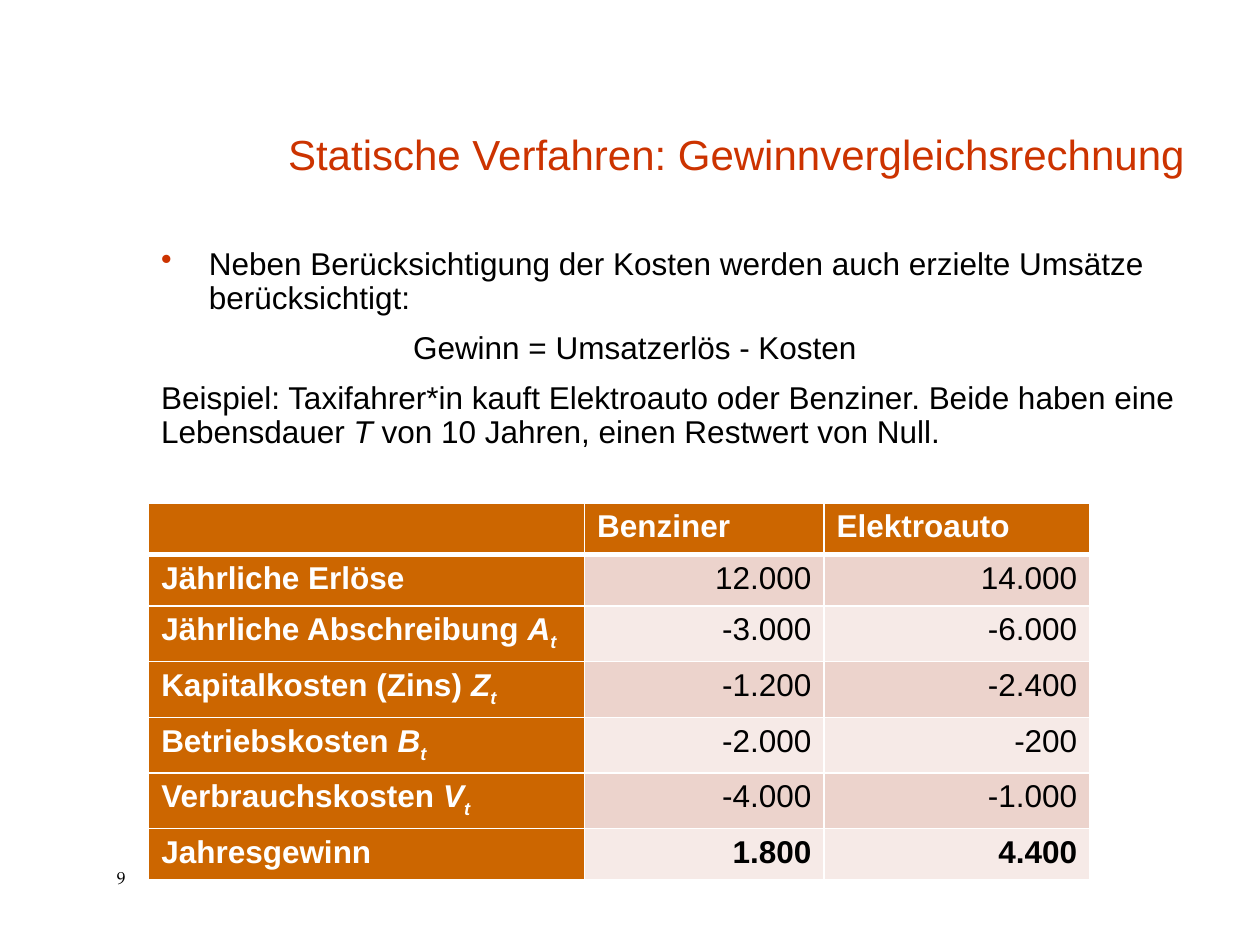
from dataclasses import dataclass

from lxml import etree
from pptx import Presentation
from pptx.dml.color import RGBColor
from pptx.enum.text import MSO_ANCHOR, PP_ALIGN
from pptx.oxml.ns import qn
from pptx.util import Inches, Pt

LEFT, RIGHT = PP_ALIGN.LEFT, PP_ALIGN.RIGHT
TOP, BOTTOM = MSO_ANCHOR.TOP, MSO_ANCHOR.BOTTOM
BLANK_LAYOUT = 6
COLORS = {
    "accent": "CC3300",
    "header": "CC6600",
    "band_dark": "ECD3CC",
    "band_light": "F6EAE7",
    "white": "FFFFFF",
    "black": "000000",
}
COLUMN_WIDTHS = (3.46, 1.9, 2.11)
ROW_HEIGHT = 0.41
THIN, THICK = 0.96, 3


@dataclass
class Style:
    size: float = 18
    color: str = "black"
    font: str = "Arial"
    bold: bool = False


@dataclass
class TableRow:
    label: str
    values: tuple[str, str]
    symbol: str = ""
    bold: bool = False


ROWS = (
    TableRow("Jährliche Erlöse", ("12.000", "14.000")),
    TableRow("Jährliche Abschreibung ", ("-3.000", "-6.000"), "A"),
    TableRow("Kapitalkosten (Zins) ", ("-1.200", "-2.400"), "Z"),
    TableRow("Betriebskosten ", ("-2.000", "-200"), "B"),
    TableRow("Verbrauchskosten ", ("-4.000", "-1.000"), "V"),
    TableRow("Jahresgewinn", ("1.800", "4.400"), bold=True),
)
BODY = Style()
LABEL = Style(color="white", bold=True)


def add_run(paragraph, text: str, style: Style, italic: bool = False, baseline: int = 0) -> None:
    """Append a run; baseline is a percentage, negative for subscript."""
    run = paragraph.add_run()
    run.text = text
    run.font.name = style.font
    run.font.size = Pt(style.size)
    run.font.bold = style.bold
    run.font.italic = italic
    run.font.color.rgb = RGBColor.from_string(COLORS[style.color])
    if baseline:
        run.font._element.set("baseline", str(baseline * 1000))


def add_text_frame(slide, left: float, top: float, width: float, height: float, anchor=TOP):
    box = slide.shapes.add_textbox(Inches(left), Inches(top), Inches(width), Inches(height))
    box.text_frame.word_wrap = True
    box.text_frame.vertical_anchor = anchor
    return box.text_frame


def set_indent(paragraph, left: float, first_line: float = 0) -> None:
    properties = paragraph._p.get_or_add_pPr()
    properties.set("marL", str(Inches(left)))
    properties.set("indent", str(Inches(first_line)))


def add_bullet(paragraph, character: str, color: str) -> None:
    properties = paragraph._p.get_or_add_pPr()
    bullet_color = etree.SubElement(properties, qn("a:buClr"))
    etree.SubElement(bullet_color, qn("a:srgbClr"), val=COLORS[color])
    etree.SubElement(properties, qn("a:buChar"), char=character)


def format_cell(cell, fill: str, top: float = THIN, bottom: float = THIN) -> None:
    """Fill the cell and give it white borders with widths in points."""
    cell.fill.solid()
    cell.fill.fore_color.rgb = RGBColor.from_string(COLORS[fill])
    properties = cell._tc.get_or_add_tcPr()
    borders = (("a:lnL", THIN), ("a:lnR", THIN), ("a:lnT", top), ("a:lnB", bottom))
    for position, (tag, width) in enumerate(borders):
        line = etree.Element(qn(tag), w=str(Pt(width)))
        line_fill = etree.SubElement(line, qn("a:solidFill"))
        etree.SubElement(line_fill, qn("a:srgbClr"), val=COLORS["white"])
        properties.insert(position, line)


def add_title(slide) -> None:
    paragraph = add_text_frame(slide, 2.09, 0.42, 7.41, 1.05, BOTTOM).paragraphs[0]
    paragraph.alignment = RIGHT
    paragraph.line_spacing = 0.9
    add_run(paragraph, "Statische Verfahren: Gewinnvergleichsrechnung", Style(24, "accent"))


def add_body(slide) -> None:
    frame = add_text_frame(slide, 1.18, 1.92, 8.29, 2.28)
    statement, formula, example = frame.paragraphs[0], frame.add_paragraph(), frame.add_paragraph()
    set_indent(statement, 0.38, -0.38)
    add_bullet(statement, "•", "accent")
    set_indent(formula, 2)
    for paragraph in (statement, formula, example):
        paragraph.alignment = LEFT
        paragraph.line_spacing = 0.9
    for paragraph in (formula, example):
        paragraph.space_before = Pt(9)

    add_run(statement, "Neben Berücksichtigung der Kosten werden auch erzielte Umsätze berücksichtigt:", BODY)
    add_run(formula, "Gewinn = Umsatzerlös - Kosten", BODY)
    add_run(example, "Beispiel: Taxifahrer*in kauft Elektroauto oder Benziner. "
                     "Beide haben eine Lebensdauer ", BODY)
    add_run(example, "T", BODY, italic=True)
    add_run(example, " von 10 Jahren, einen Restwert von Null.", BODY)


def add_profit_table(slide) -> None:
    row_count = len(ROWS) + 1
    table = slide.shapes.add_table(
        row_count, len(COLUMN_WIDTHS), Inches(1.18), Inches(3.99),
        Inches(sum(COLUMN_WIDTHS)), Inches(ROW_HEIGHT * row_count),
    ).table
    for column, width in zip(table.columns, COLUMN_WIDTHS):
        column.width = Inches(width)
    for row in table.rows:
        row.height = Inches(ROW_HEIGHT)

    for column_index, heading in enumerate(("", "Benziner", "Elektroauto")):
        cell = table.cell(0, column_index)
        format_cell(cell, "header", bottom=THICK)
        if heading:
            add_run(cell.text_frame.paragraphs[0], heading, LABEL)

    for row_index, row in enumerate(ROWS, start=1):
        top = THICK if row_index == 1 else THIN
        label_cell = table.cell(row_index, 0)
        format_cell(label_cell, "header", top=top)
        paragraph = label_cell.text_frame.paragraphs[0]
        add_run(paragraph, row.label, LABEL)
        if row.symbol:
            add_run(paragraph, row.symbol, LABEL, italic=True)
            add_run(paragraph, "t", LABEL, italic=True, baseline=-25)
        for column_index, value in enumerate(row.values, start=1):
            cell = table.cell(row_index, column_index)
            format_cell(cell, "band_dark" if row_index % 2 else "band_light", top=top)
            paragraph = cell.text_frame.paragraphs[0]
            paragraph.alignment = RIGHT
            add_run(paragraph, value, Style(bold=row.bold))


def add_page_number(slide) -> None:
    paragraph = add_text_frame(slide, 0.83, 6.83, 0.67, 0.29).paragraphs[0]
    add_run(paragraph, "9", Style(10, font="TeX Gyre Pagella"))


def main() -> None:
    presentation = Presentation()
    presentation.slide_width = Inches(10)
    presentation.slide_height = Inches(7.5)
    slide = presentation.slides.add_slide(presentation.slide_layouts[BLANK_LAYOUT])
    add_page_number(slide)
    add_title(slide)
    add_body(slide)
    add_profit_table(slide)
    presentation.save("out.pptx")


if __name__ == "__main__":
    main()
